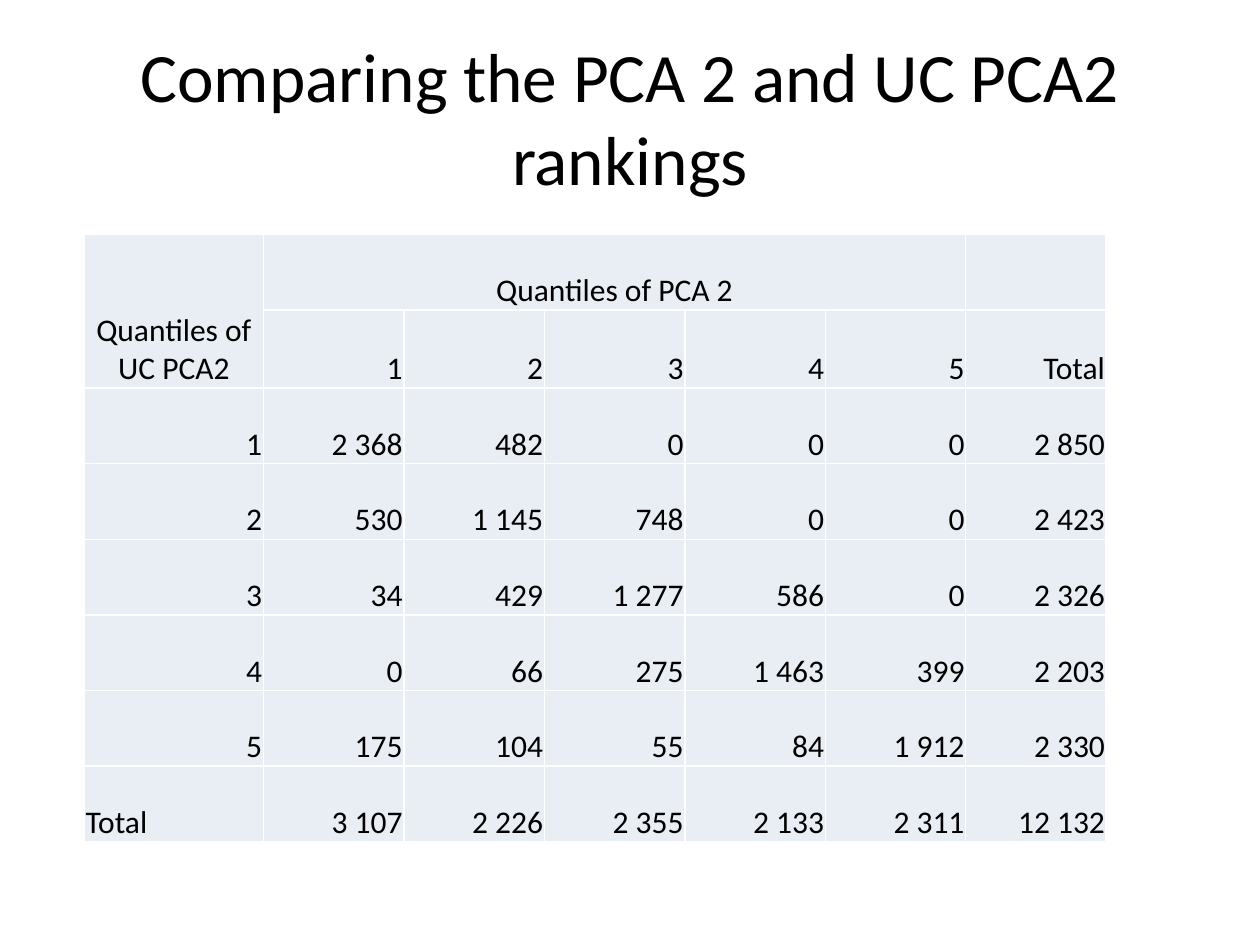
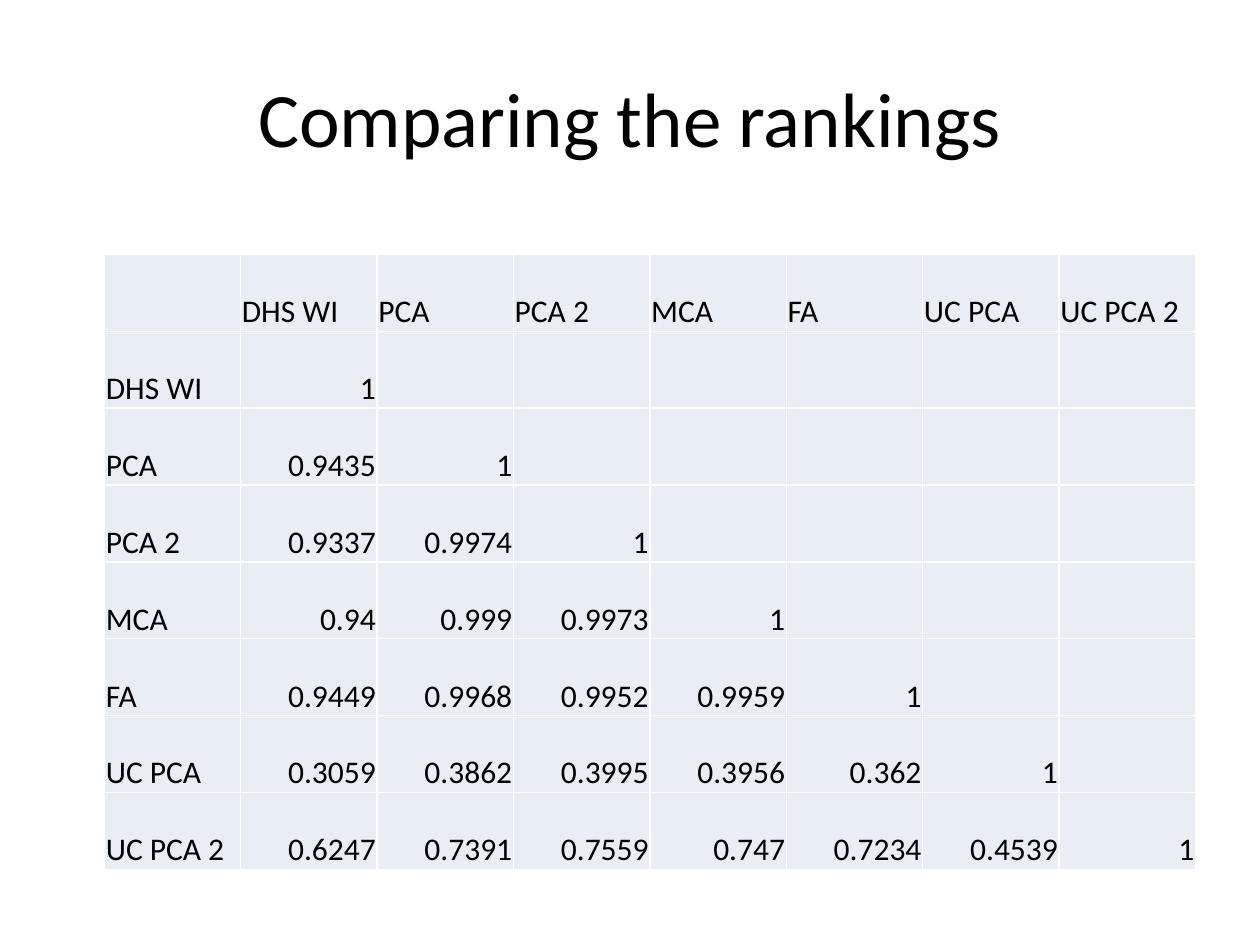
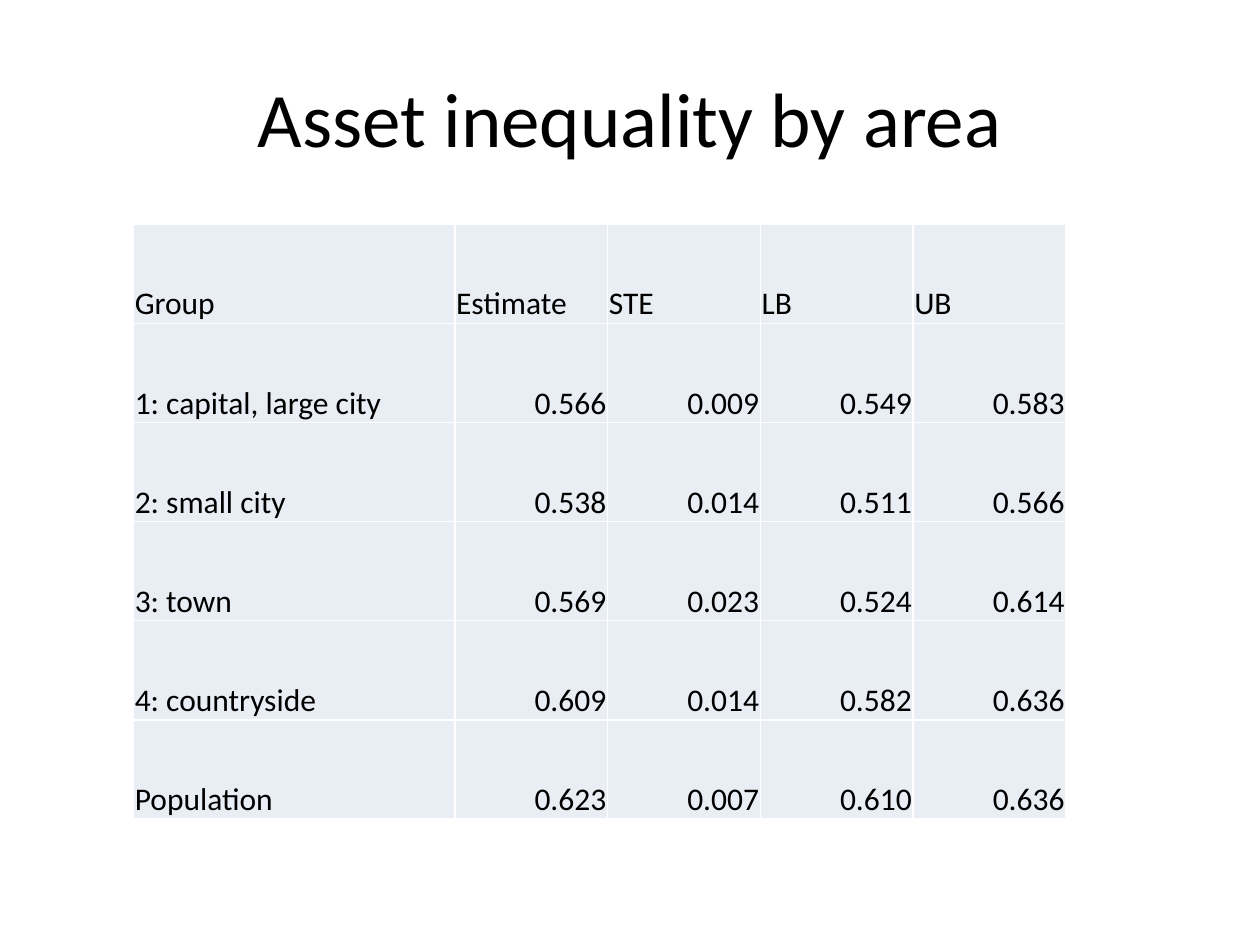
import pptx
import pptx.dml.color
import pptx.enum.text
import pptx.oxml
import pptx.oxml.ns
import pptx.util
from pptx.util import Inches

TEXT = pptx.dml.color.RGBColor(0x00, 0x00, 0x00)
CELL_FILL = pptx.dml.color.RGBColor(0xE9, 0xED, 0xF4)
RULE = pptx.dml.color.RGBColor(0xFF, 0xFF, 0xFF)
FONT = "Calibri"
TITLE_ONLY = 5
LEFT = pptx.enum.text.PP_ALIGN.LEFT
CENTER = pptx.enum.text.PP_ALIGN.CENTER
RIGHT = pptx.enum.text.PP_ALIGN.RIGHT

QUANTILES = [
    ["Quantiles of UC PCA2", "Quantiles of PCA 2", "", "", "", "", ""],
    ["", "1", "2", "3", "4", "5", "Total"],
    ["1", "2 368", "482", "0", "0", "0", "2 850"],
    ["2", "530", "1 145", "748", "0", "0", "2 423"],
    ["3", "34", "429", "1 277", "586", "0", "2 326"],
    ["4", "0", "66", "275", "1 463", "399", "2 203"],
    ["5", "175", "104", "55", "84", "1 912", "2 330"],
    ["Total", "3 107", "2 226", "2 355", "2 133", "2 311", "12 132"],
]

METHODS = ["DHS WI", "PCA", "PCA 2", "MCA", "FA", "UC PCA", "UC PCA 2"]
CORRELATIONS = [
    [],
    ["0.9435"],
    ["0.9337", "0.9974"],
    ["0.94", "0.999", "0.9973"],
    ["0.9449", "0.9968", "0.9952", "0.9959"],
    ["0.3059", "0.3862", "0.3995", "0.3956", "0.362"],
    ["0.6247", "0.7391", "0.7559", "0.747", "0.7234", "0.4539"],
]

INEQUALITY = [
    ["Group", "Estimate", "STE", "LB", "UB"],
    ["1: capital, large city", "0.566", "0.009", "0.549", "0.583"],
    ["2: small city", "0.538", "0.014", "0.511", "0.566"],
    ["3: town", "0.569", "0.023", "0.524", "0.614"],
    ["4: countryside", "0.609", "0.014", "0.582", "0.636"],
    ["Population", "0.623", "0.007", "0.610", "0.636"],
]


def correlation_rows():
    """Lower triangle with a diagonal of ones, padded to a full grid."""
    rows = [["", *METHODS]]
    for method, values in zip(METHODS, CORRELATIONS):
        row = [method, *values, "1"]
        rows.append(row + [""] * (len(METHODS) + 1 - len(row)))
    return rows


def default_alignment(text):
    is_number = text.replace(" ", "").replace(".", "").isdigit()
    return RIGHT if is_number else LEFT


class Deck:
    def __init__(self):
        self.presentation = pptx.Presentation()
        self.presentation.slide_width = Inches(10)
        self.presentation.slide_height = Inches(7.5)
        self.slide = None

    def add_text(self, frame, text, size, alignment):
        paragraph = frame.paragraphs[0]
        paragraph.alignment = alignment
        run = paragraph.add_run()
        run.text = text
        run.font.name = FONT
        run.font.size = pptx.util.Pt(size)
        run.font.color.rgb = TEXT

    def add_slide(self, heading, size=44):
        layout = self.presentation.slide_layouts[TITLE_ONLY]
        self.slide = self.presentation.slides.add_slide(layout)
        title = self.slide.shapes.title
        title.left, title.top = Inches(0.5), Inches(0.3)
        title.width, title.height = Inches(9), Inches(1.25)
        title.text_frame.vertical_anchor = pptx.enum.text.MSO_ANCHOR.MIDDLE
        self.add_text(title.text_frame, heading, size, CENTER)

    def add_grid(self, rows, left, top, width, height, first_width,
                 alignments=None, merges=()):
        """Table with equal rows and equal columns after the first one.

        alignments maps (row, column) to an alignment that differs from
        the default; merges lists pairs of corner cells.
        """
        alignments = alignments or {}
        column_count = len(rows[0])
        table = self.slide.shapes.add_table(
            len(rows), column_count, Inches(left), Inches(top),
            Inches(width), Inches(height)).table
        table.first_row = table.horz_banding = False
        other_width = (width - first_width) / (column_count - 1)
        for index, column in enumerate(table.columns):
            column.width = Inches(other_width if index else first_width)
        for row in table.rows:
            row.height = Inches(height / len(rows))
        for r, row in enumerate(rows):
            for c, text in enumerate(row):
                cell = table.cell(r, c)
                self.style_cell(cell)
                if text:
                    alignment = alignments.get((r, c), default_alignment(text))
                    self.add_text(cell.text_frame, text, 18, alignment)
        for start, end in merges:
            table.cell(*start).merge(table.cell(*end))

    def style_cell(self, cell):
        cell.margin_left = cell.margin_right = cell.margin_top = Inches(0.01)
        cell.margin_bottom = 0
        cell.vertical_anchor = pptx.enum.text.MSO_ANCHOR.BOTTOM
        cell.fill.solid()
        cell.fill.fore_color.rgb = CELL_FILL
        properties = cell._tc.get_or_add_tcPr()
        for position, side in enumerate("LRTB"):
            border = pptx.oxml.parse_xml(
                f'<a:ln{side} {pptx.oxml.ns.nsdecls("a")} w="12700">'
                f'<a:solidFill><a:srgbClr val="{RULE}"/></a:solidFill>'
                f'</a:ln{side}>')
            properties.insert(position, border)


def main():
    deck = Deck()

    deck.add_slide("Comparing the PCA 2 and UC PCA2 rankings", size=39.6)
    deck.add_grid(
        QUANTILES, 0.67, 1.86, 8.11, 4.8, first_width=1.42,
        alignments={(0, 0): CENTER, (0, 1): CENTER, (1, 6): RIGHT},
        merges=[((0, 0), (1, 0)), ((0, 1), (0, 5))])

    deck.add_slide("Comparing the rankings")
    deck.add_grid(correlation_rows(), 0.83, 2.02, 8.66, 4.88, first_width=1.08)

    deck.add_slide("Asset inequality by area")
    deck.add_grid(INEQUALITY, 1.06, 1.78, 7.4, 4.72, first_width=2.55)

    deck.presentation.save("out.pptx")


if __name__ == "__main__":
    main()
